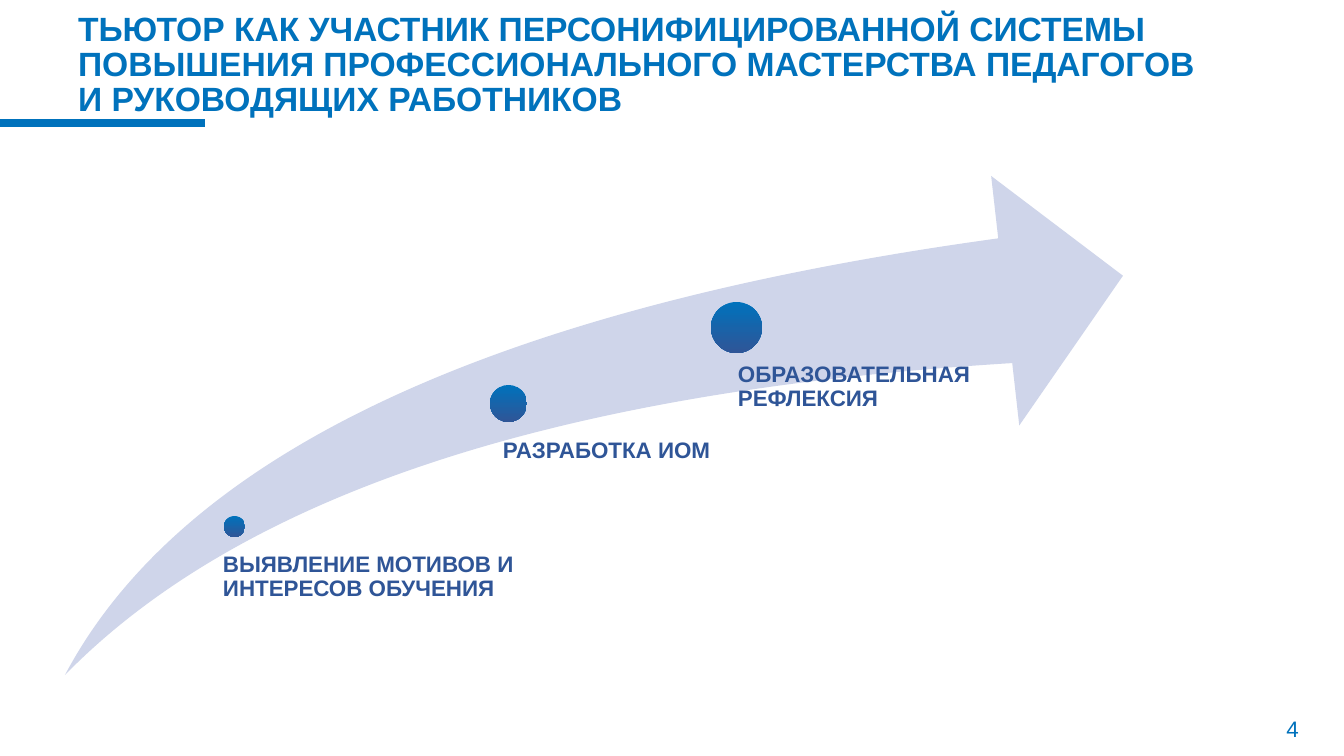
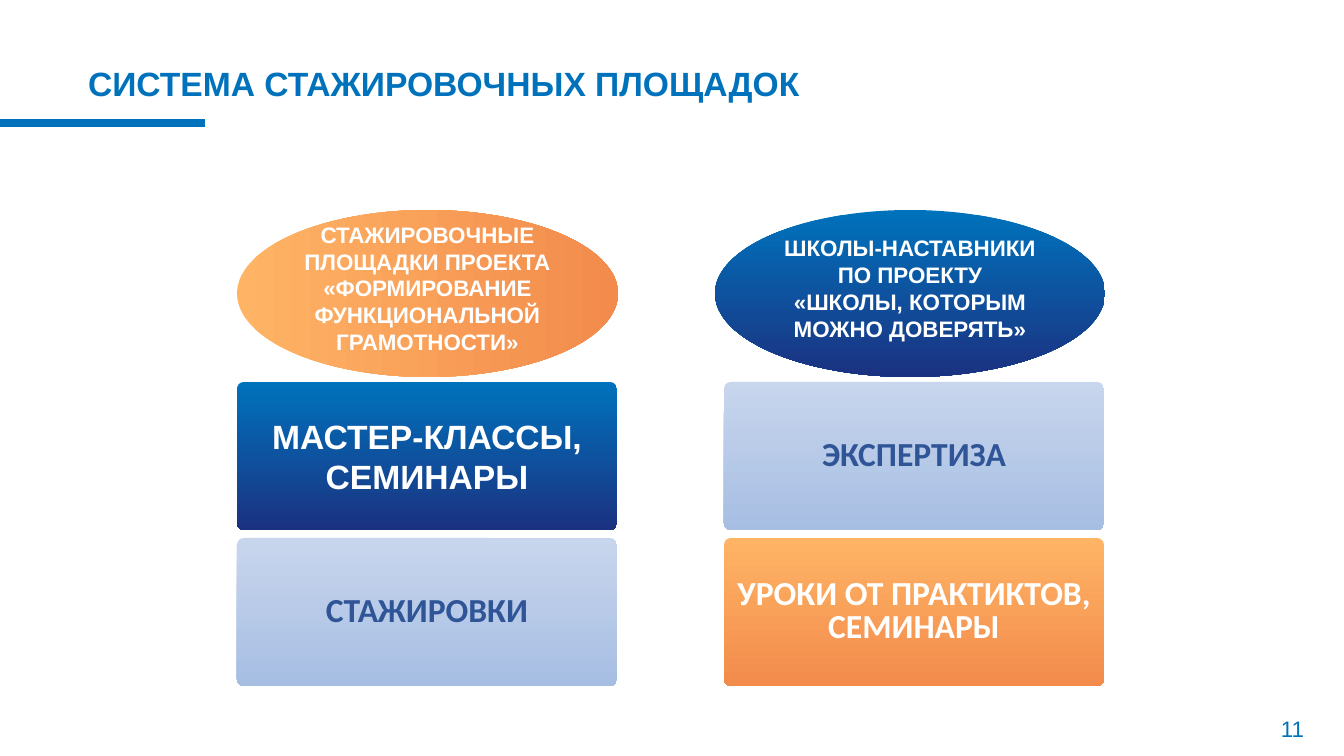
"""Build two slides on tutoring and on the system of internship sites."""
import lxml.etree
import pptx
import pptx.dml.color
import pptx.enum.shapes
import pptx.enum.text
import pptx.oxml.ns
import pptx.util

SCALE = 914400 / 100.8
COLORS = {
    "accent": "0072BC",
    "label": "2F5597",
    "swoosh": "CFD5EA",
    "white": "FFFFFF",
}
GRADIENTS = {
    "dot": ("0072BC", "2F5597"),
    "blue": ("0072BC", "1B3281"),
    "orange": ("FFB465", "F28B4C"),
    "pale": ("B4C7E7", "87A6D9"),
}
PALE_ALPHA = 73000
DOWN, RIGHTWARD = 270, 0
SHAPES = pptx.enum.shapes.MSO_SHAPE
ALIGN = pptx.enum.text.PP_ALIGN
ANCHOR = pptx.enum.text.MSO_ANCHOR


def px(*lengths):
    """Turn pixel lengths into EMU."""
    return [pptx.util.Emu(round(length * SCALE)) for length in lengths]


def rgb(value):
    """Turn a hex string into a colour."""
    return pptx.dml.color.RGBColor.from_string(value)


class Deck:
    """Hold the style and the current slide."""

    def __init__(self):
        """Start an empty widescreen presentation."""
        self.presentation = pptx.Presentation()
        self.presentation.slide_width, self.presentation.slide_height = px(1344, 756)
        self.slide = None

    def add_slide(self, title, box, number, spacing=None):
        """Add a slide with its title, accent line and page number."""
        self.slide = self.presentation.slides.add_slide(self.presentation.slide_layouts[5])
        shape = self.slide.shapes.title
        shape.left, shape.top, shape.width, shape.height = px(*box)
        self.set_text(shape, title, 24, "accent", bold=True, spacing=spacing)
        self.line(0, 123, 205, 123)
        self.text(number, (1252, 708, 81, 41), 16, "accent", align=ALIGN.CENTER,
                  anchor=ANCHOR.MIDDLE)

    def set_text(self, shape, text, size, color, font="Arial", bold=False,
                 align=ALIGN.LEFT, anchor=ANCHOR.MIDDLE, spacing=None, wrap=True):
        """Fill a shape with uniformly formatted text."""
        frame = shape.text_frame
        frame.text = text
        frame.word_wrap = wrap
        frame.auto_size = pptx.enum.text.MSO_AUTO_SIZE.NONE
        frame.vertical_anchor = anchor
        for paragraph in frame.paragraphs:
            paragraph.alignment = align
            paragraph.line_spacing = spacing
            paragraph.font.name = font
            paragraph.font.size = pptx.util.Pt(size)
            paragraph.font.bold = bold
            paragraph.font.color.rgb = rgb(COLORS[color])
        return frame

    def text(self, text, box, size, color, **style):
        """Add a text box."""
        return self.set_text(self.slide.shapes.add_textbox(*px(*box)), text, size, color, **style)

    def line(self, *ends):
        """Add the thick accent line."""
        connector = self.slide.shapes.add_connector(
            pptx.enum.shapes.MSO_CONNECTOR.STRAIGHT, *px(*ends))
        connector.line.color.rgb = rgb(COLORS["accent"])
        connector.line.width = pptx.util.Pt(6)
        lxml.etree.SubElement(connector._element.spPr, pptx.oxml.ns.qn("a:effectLst"))

    def shape(self, kind, box, adjustments=()):
        """Add a preset shape without outline or shadow."""
        shape = self.slide.shapes.add_shape(kind, *px(*box))
        shape.shadow.inherit = False
        shape.line.fill.background()
        for index, value in enumerate(adjustments):
            shape.adjustments[index] = value
        return shape

    def swoosh(self, box):
        """Add the wide curved arrow."""
        shape = self.shape(SHAPES.SWOOSH_ARROW, box, (0.25, 0.25))
        shape.fill.solid()
        shape.fill.fore_color.rgb = rgb(COLORS["swoosh"])

    def gradient_shape(self, kind, box, gradient, angle=DOWN, adjustments=()):
        """Add a shape filled with a named gradient."""
        shape = self.shape(kind, box, adjustments)
        shape.fill.gradient()
        shape.fill.gradient_angle = angle
        for stop, value in zip(shape.fill.gradient_stops, GRADIENTS[gradient]):
            stop.color.rgb = rgb(value)
        if gradient == "pale":
            for color in shape._element.spPr.iter(pptx.oxml.ns.qn("a:srgbClr")):
                alpha = lxml.etree.SubElement(color, pptx.oxml.ns.qn("a:alpha"))
                alpha.set("val", str(PALE_ALPHA))
        return shape

    def step(self, text, dot, diameter, label):
        """Add a dot on the arrow and its label."""
        self.gradient_shape(SHAPES.OVAL, (*dot, diameter, diameter), "dot")
        frame = self.text(text, label, 16, "label", bold=True, anchor=ANCHOR.TOP, spacing=0.9)
        frame.margin_left = frame.margin_top = frame.margin_right = frame.margin_bottom = 0

    def heading(self, text, box, gradient, angle):
        """Add an ellipse heading a column."""
        shape = self.gradient_shape(SHAPES.OVAL, box, gradient, angle)
        frame = self.set_text(shape, text, 16, "white", bold=True, align=ALIGN.CENTER, wrap=False)
        frame.margin_bottom = px(16)[0]

    def card(self, text, box, gradient, font="Calibri", spacing=pptx.util.Pt(24)):
        """Add a rounded card with a centred caption."""
        shape = self.gradient_shape(SHAPES.ROUNDED_RECTANGLE, box, gradient, adjustments=(0.045,))
        color = "label" if gradient == "pale" else "white"
        frame = self.set_text(shape, text, 24, color, font, True, ALIGN.CENTER, spacing=spacing)
        frame.margin_left = frame.margin_right = 0


def build_tutor(deck):
    """Build the slide on the tutor's steps."""
    deck.add_slide(
        "ТЬЮТОР КАК УЧАСТНИК ПЕРСОНИФИЦИРОВАННОЙ СИСТЕМЫ ПОВЫШЕНИЯ "
        "ПРОФЕССИОНАЛЬНОГО МАСТЕРСТВА ПЕДАГОГОВ И РУКОВОДЯЩИХ РАБОТНИКОВ",
        (68, 13, 1160, 106), "4", pptx.util.Pt(25))
    deck.swoosh((65, 176, 1058, 499))
    for step in (
        ("ВЫЯВЛЕНИЕ МОТИВОВ И ИНТЕРЕСОВ ОБУЧЕНИЯ", (224, 516), 21, (223, 553, 341, 112)),
        ("РАЗРАБОТКА ИОМ", (490, 385), 37, (503, 439, 234, 218)),
        ("ОБРАЗОВАТЕЛЬНАЯ РЕФЛЕКСИЯ", (711, 302), 51, (738, 363, 374, 326)),
    ):
        deck.step(*step)


def build_sites(deck):
    """Build the slide on internship sites."""
    deck.add_slide("СИСТЕМА СТАЖИРОВОЧНЫХ ПЛОЩАДОК", (78, 24, 1139, 118), "11")
    deck.heading(
        "СТАЖИРОВОЧНЫЕ\nПЛОЩАДКИ ПРОЕКТА\n«ФОРМИРОВАНИЕ\vФУНКЦИОНАЛЬНОЙ\nГРАМОТНОСТИ»",
        (237, 210, 381, 167), "orange", RIGHTWARD)
    deck.heading(
        "ШКОЛЫ-НАСТАВНИКИ\vПО ПРОЕКТУ\n«ШКОЛЫ, КОТОРЫМ\vМОЖНО ДОВЕРЯТЬ»",
        (715, 210, 390, 167), "blue", DOWN)
    left, right, upper, lower = 237, 724, 382, 538
    size = (380, 148)
    deck.card("МАСТЕР-КЛАССЫ,\nСЕМИНАРЫ", (left, upper, *size), "blue", "Arial", None)
    deck.card("ЭКСПЕРТИЗА", (right, upper, *size), "pale")
    deck.card("СТАЖИРОВКИ", (left, lower, *size), "pale")
    deck.card("УРОКИ ОТ ПРАКТИКТОВ,\nСЕМИНАРЫ", (right, lower, *size), "orange")


def main():
    """Build and save the presentation."""
    deck = Deck()
    build_tutor(deck)
    build_sites(deck)
    deck.presentation.save("out.pptx")


if __name__ == "__main__":
    main()
